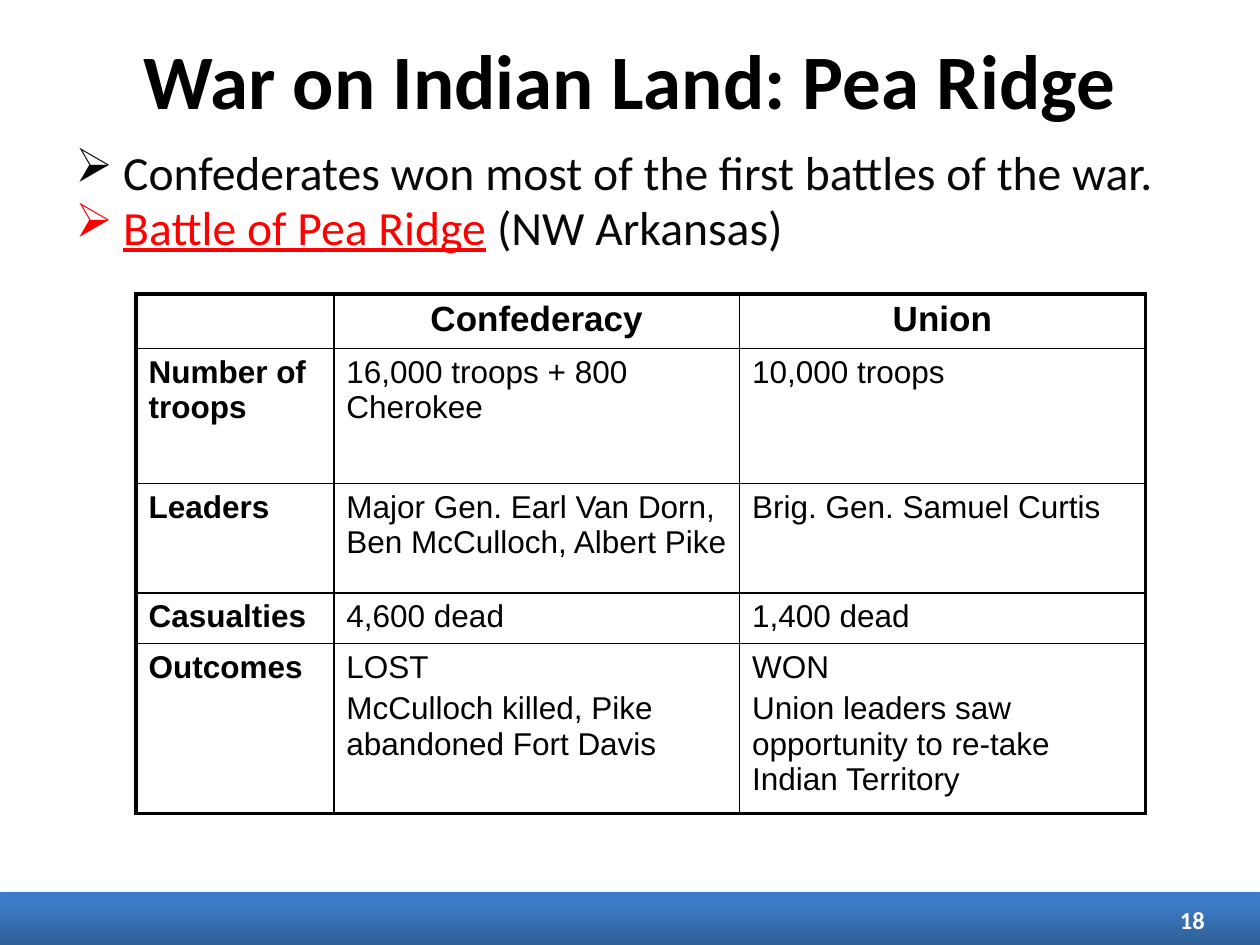
from pptx import Presentation
from pptx.dml.color import RGBColor as Color
from pptx.enum.shapes import MSO_SHAPE as Shape
from pptx.enum.text import MSO_ANCHOR as Anchor, PP_ALIGN as Align
from pptx.oxml import parse_xml
from pptx.oxml.ns import nsdecls
from pptx.util import Inches, Pt

COLORS = {
    "black": "000000", "ink": "080808", "red": "FF0000", "white": "FFFFFF",
    "bar_low": "2F5F99", "bar_mid": "3D7CC7", "bar_top": "3A7CCB",
}
WIDTH, HEIGHT = Inches(10), Inches(7.5)
COLUMNS = [1.57, 3.22, 3.22]
ROWS = [0.41, 1.07, 0.87, 0.38, 1.27]
CELLS = [
    [[], ["Confederacy"], ["Union"]],
    [["Number of troops"], ["16,000 troops + 800 Cherokee"], ["10,000 troops"]],
    [["Leaders"], ["Major Gen. Earl Van Dorn, Ben McCulloch, Albert Pike"],
     ["Brig. Gen. Samuel Curtis"]],
    [["Casualties"], ["4,600 dead"], ["1,400 dead"]],
    [["Outcomes"], ["LOST", "McCulloch killed, Pike abandoned Fort Davis"],
     ["WON", "Union leaders saw opportunity to re-take Indian Territory"]],
]
BULLETS = [
    [("Confederates won most of the first battles of the war.", "ink", False)],
    [("Battle of Pea Ridge", "red", True), (" (NW Arkansas)", "ink", False)],
]


def element(xml):
    """Parse a DrawingML fragment whose root tag lacks its namespace."""
    tag, rest = xml[:-1].split(" ", 1) if xml.endswith("/>") else xml.split(" ", 1)
    closing = ">" if xml.endswith("/>") else ""
    return parse_xml(f"{tag} {nsdecls('a')} {rest}{closing}")


def place(left, top, width, height):
    """Turn shares of the slide into lengths."""
    return (round(left * WIDTH), round(top * HEIGHT),
            round(width * WIDTH), round(height * HEIGHT))


def add_span(para, text, size, font, color, bold=False, underline=False):
    """Add one formatted run to a paragraph."""
    span = para.add_run()
    span.text = text
    span.font.name, span.font.size = font, Pt(size)
    span.font.bold, span.font.underline = bold, underline
    span.font.color.rgb = Color.from_string(COLORS[color])


def add_frame(page, area, anchor):
    """Add a wrapping text box and return its text frame."""
    frame = page.shapes.add_textbox(*place(*area)).text_frame
    frame.word_wrap = True
    frame.vertical_anchor = anchor
    return frame


def add_line(page, area, text, size, color, align):
    """Add a box holding one bold line."""
    para = add_frame(page, area, Anchor.MIDDLE).paragraphs[0]
    para.alignment = align
    add_span(para, text, size, "Calibri", color, bold=True)


def add_footer_bar(page, area):
    """Add the shaded bar along the bottom edge."""
    bar = page.shapes.add_shape(Shape.RECTANGLE, *place(*area))
    bar.shadow.inherit = False
    bar.line.fill.background()
    stops = "".join(
        f'<a:gs pos="{share * 1000}"><a:srgbClr val="{COLORS[name]}"/></a:gs>'
        for share, name in ((0, "bar_low"), (80, "bar_mid"), (100, "bar_top")))
    properties = bar.element.spPr
    properties.find("{*}prstGeom").addnext(element(
        f'<a:gradFill rotWithShape="1"><a:gsLst>{stops}</a:gsLst>'
        '<a:lin ang="16200000" scaled="0"/></a:gradFill>'))
    properties.find("{*}effectLst").append(element(
        f'<a:outerShdw blurRad="{Pt(3.1)}" dist="{Pt(1.8)}" dir="5400000" '
        f'rotWithShape="0"><a:srgbClr val="{COLORS["black"]}">'
        '<a:alpha val="35000"/></a:srgbClr></a:outerShdw>'))


def add_bullets(page, area, size=27.2):
    """Add the arrow-bulleted points."""
    frame = add_frame(page, area, Anchor.TOP)
    for index, spans in enumerate(BULLETS):
        para = frame.add_paragraph() if index else frame.paragraphs[0]
        properties = para._p.get_or_add_pPr()
        properties.set("marL", str(Inches(0.38)))
        properties.set("indent", str(-Inches(0.38)))
        properties.append(element('<a:buChar char="➢"/>'))
        para.line_spacing = 0.8
        para.space_before = Pt(0.2 * size if index else 0)
        for text, color, underline in spans:
            add_span(para, text, size, "Calibri", color, underline=underline)


def style_cell(cell, row, column):
    """Give a cell its translucent fill and its thick or thin borders."""
    cell.fill.solid()
    cell.fill.fore_color.rgb = Color.from_string(COLORS["white"])
    properties = cell._tc.get_or_add_tcPr()
    alpha = 50 if row or column else 37
    properties.find(".//{*}srgbClr").append(element(f'<a:alpha val="{alpha * 1000}"/>'))
    outer = {"L": column == 0, "R": column == len(COLUMNS) - 1,
             "T": row == 0, "B": row == len(ROWS) - 1}
    for index, (side, thick) in enumerate(outer.items()):
        properties.insert(index, element(
            f'<a:ln{side} w="{Pt(2.25 if thick else 1)}"><a:solidFill>'
            f'<a:srgbClr val="{COLORS["black"]}"/></a:solidFill></a:ln{side}>'))


def add_battle_table(page, area):
    """Add the table comparing both sides."""
    table = page.shapes.add_table(len(ROWS), len(COLUMNS), *place(*area)).table
    table.first_row = table.horz_banding = False
    for column, width in zip(table.columns, COLUMNS):
        column.width = Inches(width)
    for row, height in enumerate(ROWS):
        table.rows[row].height = Inches(height)
        size = 18 if row else 20
        for column, lines in enumerate(CELLS[row]):
            cell = table.cell(row, column)
            style_cell(cell, row, column)
            for index, text in enumerate(lines):
                frame = cell.text_frame
                para = frame.add_paragraph() if index else frame.paragraphs[0]
                para.alignment = Align.LEFT if row else Align.CENTER
                para.space_before = Pt(0.2 * size if index else 0)
                add_span(para, text, size, "Arial", "black",
                         bold=row == 0 or column == 0)


def main():
    """Build and save the slide."""
    deck = Presentation()
    deck.slide_width, deck.slide_height = WIDTH, HEIGHT
    page = deck.slides.add_slide(deck.slide_layouts[6])
    add_footer_bar(page, (0, 0.944, 1, 0.056))
    add_line(page, (0.05, 0, 0.9, 0.167), "War on Indian Land: Pea Ridge",
             44, "black", Align.CENTER)
    add_bullets(page, (0.05, 0.156, 0.917, 0.167))
    add_line(page, (0.733, 0.947, 0.233, 0.053), "18", 14, "white", Align.RIGHT)
    add_battle_table(page, (0.108, 0.311, 0.801, 0.533))
    deck.save("out.pptx")


if __name__ == "__main__":
    main()
